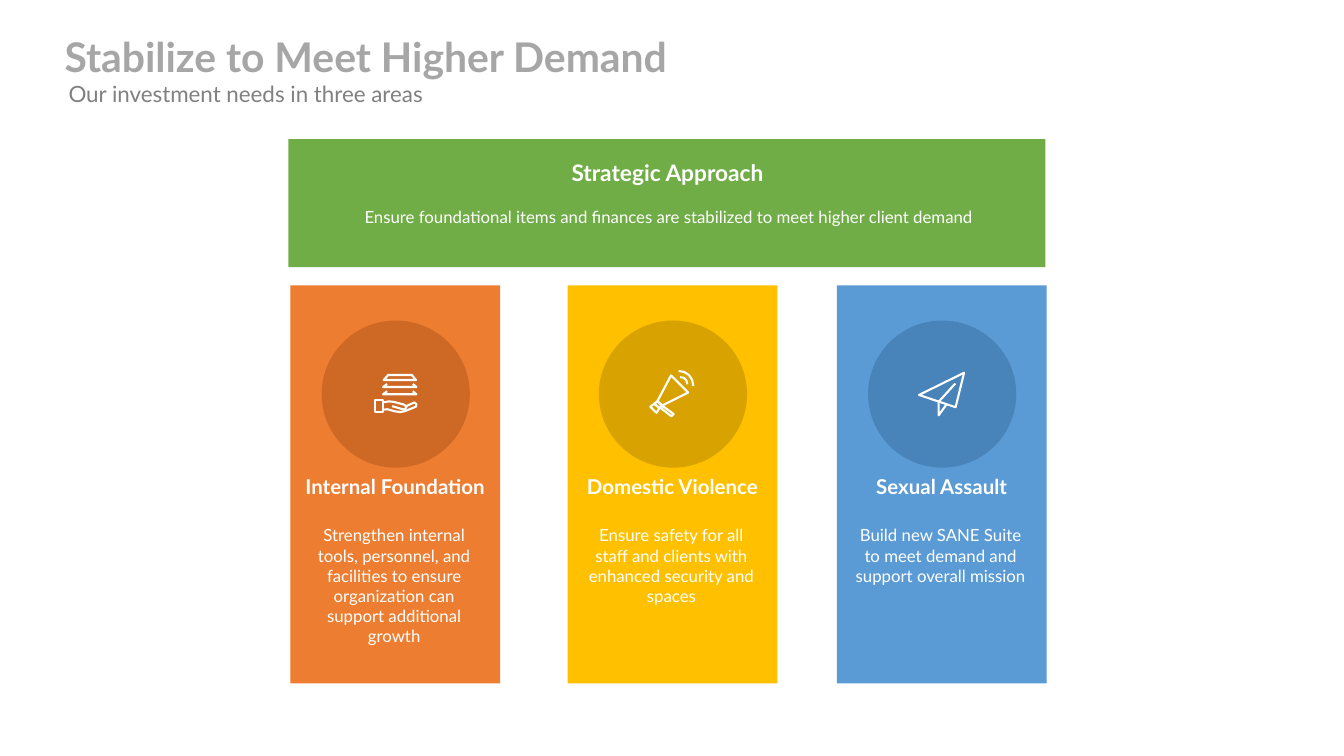
import pptx
import pptx.util
import pptx.dml.color
import pptx.enum.shapes
import pptx.enum.text
import pptx.oxml.ns
from lxml import etree

Inches = pptx.util.Inches
SHAPE = pptx.enum.shapes.MSO_SHAPE
ALIGN = pptx.enum.text.PP_ALIGN
ANCHOR = pptx.enum.text.MSO_ANCHOR

COLORS = {
    "white": "FFFFFF", "title": "A6A6A6", "subtitle": "808080",
    "green": "70AD47", "orange": "ED7D31", "yellow": "FFC000", "blue": "5B9BD5",
    "dark orange": "843C0B", "dark yellow": "806000", "dark blue": "1F4E79",
}
FONT = "Lato"
TITLE = "Stabilize to Meet Higher Demand"
SUBTITLE = "Our investment needs in three areas"
BANNER = ("Strategic Approach",
          "Ensure foundational items and finances are stabilized to meet higher client demand")

PLATES = [
    (True, [(615, 590), (935, 590), (895, 540), (660, 540)]),
    *[(False, [(650, top), (610, top + 30), (940, top + 30), (905, top)]) for top in (630, 702)],
]
HAND = PLATES + [
    (True, [(530, 790), (610, 790), (610, 910), (530, 910)]),
    (False, [(620, 810), (670, 802), (720, 808), (820, 835), (842, 855),
             (830, 878), (812, 882), (700, 850)]),
    (False, [(842, 848), (920, 813), (940, 830), (935, 855), (825, 900),
             (780, 908), (720, 900), (650, 880), (620, 885)]),
]
MEGAPHONE = [
    (True, [(580, 800), (715, 545), (885, 715), (630, 842)]),
    (True, [(510, 855), (550, 825), (600, 870), (572, 915)]),
    (True, [(550, 825), (580, 800), (622, 845), (600, 870)]),
    (True, [(612, 868), (720, 950), (742, 928), (635, 850)]),
    (False, [(790, 500), (845, 510), (895, 542), (925, 590), (937, 650)]),
    (False, [(805, 562), (840, 568), (867, 592), (877, 632)]),
]
PLANE = [
    (True, [(505, 738), (952, 518), (868, 860)]),
    (False, [(865, 625), (700, 806), (700, 940), (776, 836)]),
]
CARDS = [
    (2.88, "orange", "Internal Foundation",
     "Strengthen internal tools, personnel, and facilities to ensure organization "
     "can support additional growth", HAND),
    (5.63, "yellow", "Domestic Violence",
     "Ensure safety for all staff and clients with enhanced security and spaces", MEGAPHONE),
    (8.30, "blue", "Sexual Assault",
     "Build new SANE Suite to meet demand and support overall mission", PLANE),
]
CARD_TOP, CARD_WIDTH, CARD_HEIGHT = 2.83, 2.08, 3.95
DISC_LEFT, DISC_TOP, DISC_WIDTH, DISC_HEIGHT = 0.31, 3.18, 1.47, 1.46


def rgb(name):
    return pptx.dml.color.RGBColor.from_string(COLORS[name])


def write(box, text, size, color="white", bold=False, align=ALIGN.CENTER,
          anchor=ANCHOR.TOP, inset=(0.1, 0.05), line=1.0, before=0):
    frame = box.text_frame
    frame.word_wrap = True
    frame.auto_size = pptx.enum.text.MSO_AUTO_SIZE.NONE
    frame.vertical_anchor = anchor
    frame.margin_left = frame.margin_right = Inches(inset[0])
    frame.margin_top = frame.margin_bottom = Inches(inset[1])
    para = frame.paragraphs[0]
    para.alignment = align
    para.line_spacing = line
    para.space_before = pptx.util.Pt(before)
    span = para.add_run()
    span.text = text
    span.font.name = FONT
    span.font.size = pptx.util.Pt(size)
    span.font.bold = bold
    span.font.color.rgb = rgb(color)
    return para


def place(box, left, top, width, height):
    box.left, box.top = Inches(left), Inches(top)
    box.width, box.height = Inches(width), Inches(height)


def add_text(slide, area, text, size, **style):
    box = slide.shapes.add_textbox(*map(Inches, area))
    write(box, text, size, **style)


def add_filled(slide, kind, area, color, opacity=100):
    shape = slide.shapes.add_shape(kind, *map(Inches, area))
    shape.shadow.inherit = False
    shape.line.fill.background()
    shape.fill.solid()
    shape.fill.fore_color.rgb = rgb(color)
    if opacity < 100:
        tint = shape.fill._xPr.find(".//" + pptx.oxml.ns.qn("a:srgbClr"))
        etree.SubElement(tint, pptx.oxml.ns.qn("a:alpha"), val=str(opacity * 1000))


def add_icon(slide, left, top, strokes):
    for closed, points in strokes:
        spots = [(Inches(left + x / 1000), Inches(top + y / 1000)) for x, y in points]
        builder = slide.shapes.build_freeform(*spots[0])
        builder.add_line_segments(spots[1:], close=closed)
        stroke = builder.convert_to_shape()
        stroke.shadow.inherit = False
        stroke.fill.background()
        stroke.line.color.rgb = rgb("white")
        stroke.line.width = pptx.util.Pt(1.5)


def add_card(slide, left, color, heading, detail, icon):
    add_filled(slide, SHAPE.RECTANGLE, (left, CARD_TOP, CARD_WIDTH, CARD_HEIGHT), color)
    add_text(slide, (left, 4.66, CARD_WIDTH, 0.33), heading, 14.6,
             bold=True, inset=(0.08, 0.04))
    add_text(slide, (left + 0.08, 5.17, 1.9, 1.29), detail, 12, inset=(0.08, 0.04))
    disc_left = left + DISC_LEFT
    add_filled(slide, SHAPE.OVAL, (disc_left, DISC_TOP, DISC_WIDTH, DISC_HEIGHT),
               "dark " + color, opacity=30)
    add_icon(slide, disc_left, DISC_TOP, icon)


def main():
    deck = pptx.Presentation()
    deck.slide_width, deck.slide_height = Inches(13.33), Inches(7.5)
    page = deck.slides.add_slide(deck.slide_layouts[1])

    title, subtitle = page.shapes.title, page.placeholders[1]
    place(title, 0.54, 0.16, 10.59, 0.86)
    write(title, TITLE, 29.2, color="title", bold=True, align=ALIGN.LEFT,
          anchor=ANCHOR.MIDDLE, line=0.9)
    place(subtitle, 0.58, 0.82, 10.92, 0.25)
    para = write(subtitle, SUBTITLE, 16, color="subtitle", align=ALIGN.LEFT,
                 anchor=ANCHOR.MIDDLE, line=0.9, before=8.1)
    layout = para._p.get_or_add_pPr()
    layout.set("marL", "0")
    layout.set("indent", "0")
    etree.SubElement(layout, pptx.oxml.ns.qn("a:buNone"))

    for card in CARDS:
        add_card(page, *card)

    add_filled(page, SHAPE.RECTANGLE, (2.86, 1.38, 7.51, 1.27), "green")
    add_text(page, (2.86, 1.56, 7.52, 0.35), BANNER[0], 16.2, bold=True, line=0.9)
    add_text(page, (3.13, 2.0, 7.01, 0.3), BANNER[1], 12, before=3)

    deck.save("out.pptx")


if __name__ == "__main__":
    main()
